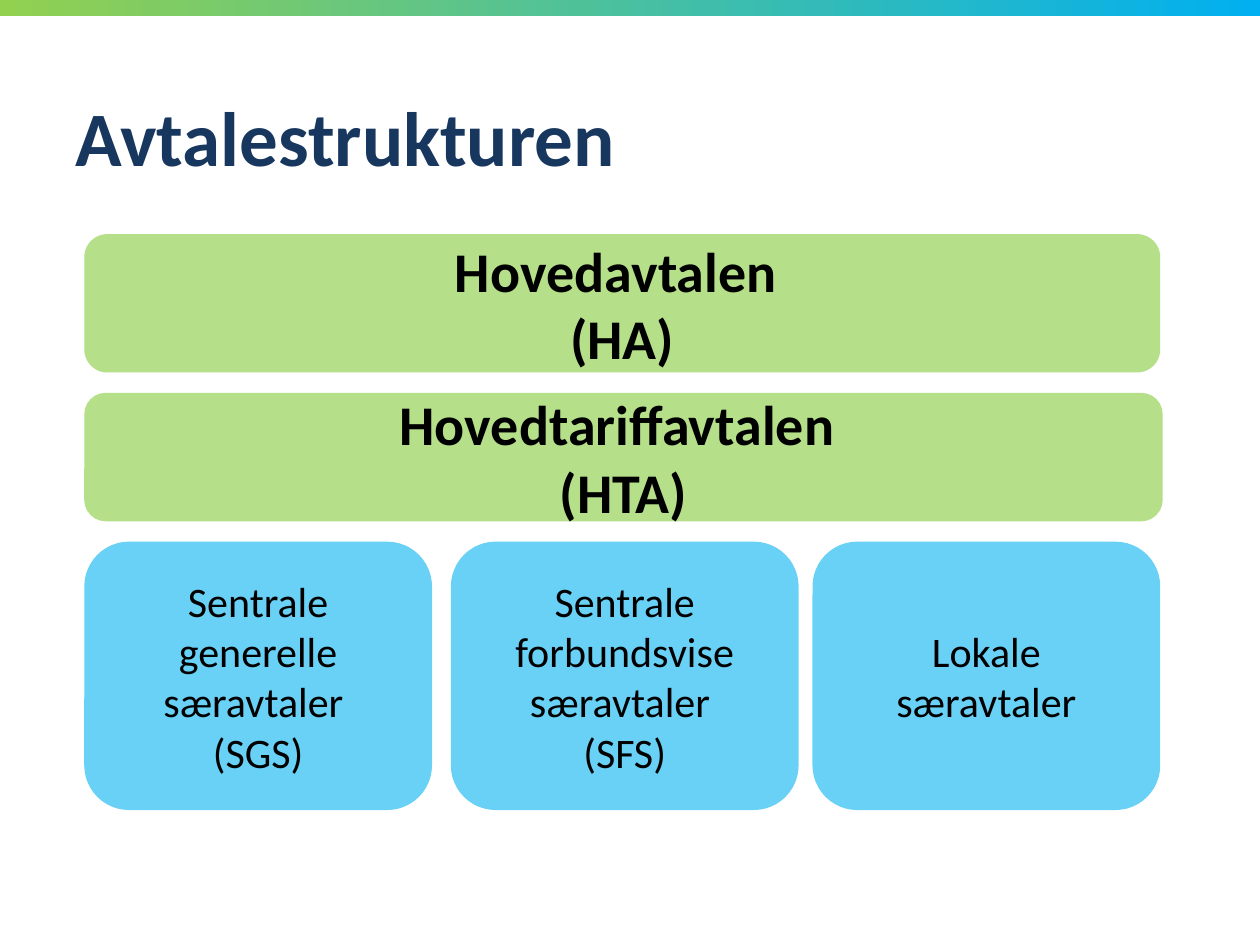
from lxml import etree
from pptx import Presentation
from pptx.dml.color import RGBColor
from pptx.enum.shapes import MSO_SHAPE
from pptx.enum.text import MSO_ANCHOR, PP_ALIGN
from pptx.oxml.ns import qn
from pptx.util import Cm, Pt

RECT, ROUNDED = MSO_SHAPE.RECTANGLE, MSO_SHAPE.ROUNDED_RECTANGLE
MIDDLE = MSO_ANCHOR.MIDDLE
LEFT, CENTER = PP_ALIGN.LEFT, PP_ALIGN.CENTER
FONT = "Calibri"
GREEN, BLUE, NAVY, BLACK = "92D050", "00B0F0", "17375E", "000000"
MARGIN = 1.7


def color(hex_string):
    """Turn a hex string into a colour."""
    return RGBColor.from_string(hex_string)


def write(tf, paragraphs, size, hex_string, bold=False, align=CENTER):
    """Write paragraphs, each a list of lines, into a text frame."""
    tf.word_wrap = True
    tf.vertical_anchor = MIDDLE
    for i, lines in enumerate(paragraphs):
        p = tf.add_paragraph() if i else tf.paragraphs[0]
        p.alignment = align
        for j, line in enumerate(lines):
            if j:
                p.add_line_break()
            r = p.add_run()
            r.text = line
            r.font.name, r.font.size, r.font.bold = FONT, Pt(size), bold
            r.font.color.rgb = color(hex_string)


def add_plain_shape(s, kind, x, y, w, h):
    """Add a shape without shadow or outline."""
    sp = s.shapes.add_shape(kind, Cm(x), Cm(y), Cm(w), Cm(h))
    sp.shadow.inherit = False
    sp.line.fill.background()
    return sp


def add_top_band(s):
    """Add the gradient band along the top edge."""
    sp = add_plain_shape(s, RECT, 0, 0, 25.4, 0.33)
    sp.fill.gradient()
    sp.fill.gradient_angle = 0
    for stop, position, hex_string in zip(sp.fill.gradient_stops, (0, 1), (GREEN, BLUE)):
        stop.position = position
        stop.color.rgb = color(hex_string)


def add_title(s, text):
    """Add the slide title."""
    sp = s.shapes.add_textbox(Cm(1.27), Cm(1.14), Cm(22.86), Cm(3.18))
    write(sp.text_frame, [[text]], 44, NAVY, True, LEFT)


def add_agreement(s, x, y, w, h, fill, opacity, paragraphs, size, bold=False):
    """Add a translucent rounded box that names an agreement."""
    sp = add_plain_shape(s, ROUNDED, x, y, w, h)
    sp.fill.solid()
    sp.fill.fore_color.rgb = color(fill)
    clr = sp._element.spPr.find(qn("a:solidFill"))[0]
    etree.SubElement(clr, qn("a:alpha")).set("val", str(opacity * 1000))
    write(sp.text_frame, paragraphs, size, BLACK, bold)


def main():
    """Build the slide with the structure of agreements."""
    prs = Presentation()
    prs.slide_width, prs.slide_height = Cm(25.4), Cm(19.05)
    s = prs.slides.add_slide(prs.slide_layouts[6])
    add_top_band(s)
    add_title(s, "Avtalestrukturen")

    main_agreements = [
        (4.72, 21.69, 2.79, ["Hovedavtalen ", "(HA)"]),
        (7.92, 21.74, 2.59, ["Hovedtariffavtalen ", "(HTA)"]),
    ]
    for y, w, h, lines in main_agreements:
        add_agreement(s, MARGIN, y, w, h, GREEN, 68, [lines], 32, True)

    special_agreements = [
        (MARGIN, [["Sentrale generelle særavtaler ", "(SGS)"]]),
        (9.09, [["Sentrale forbundsvise særavtaler "], ["(SFS)"]]),
        (16.38, [["Lokale særavtaler"]]),
    ]
    for x, paragraphs in special_agreements:
        add_agreement(s, x, 10.92, 7.01, 5.41, BLUE, 59, paragraphs, 24)

    prs.save("out.pptx")


if __name__ == "__main__":
    main()
